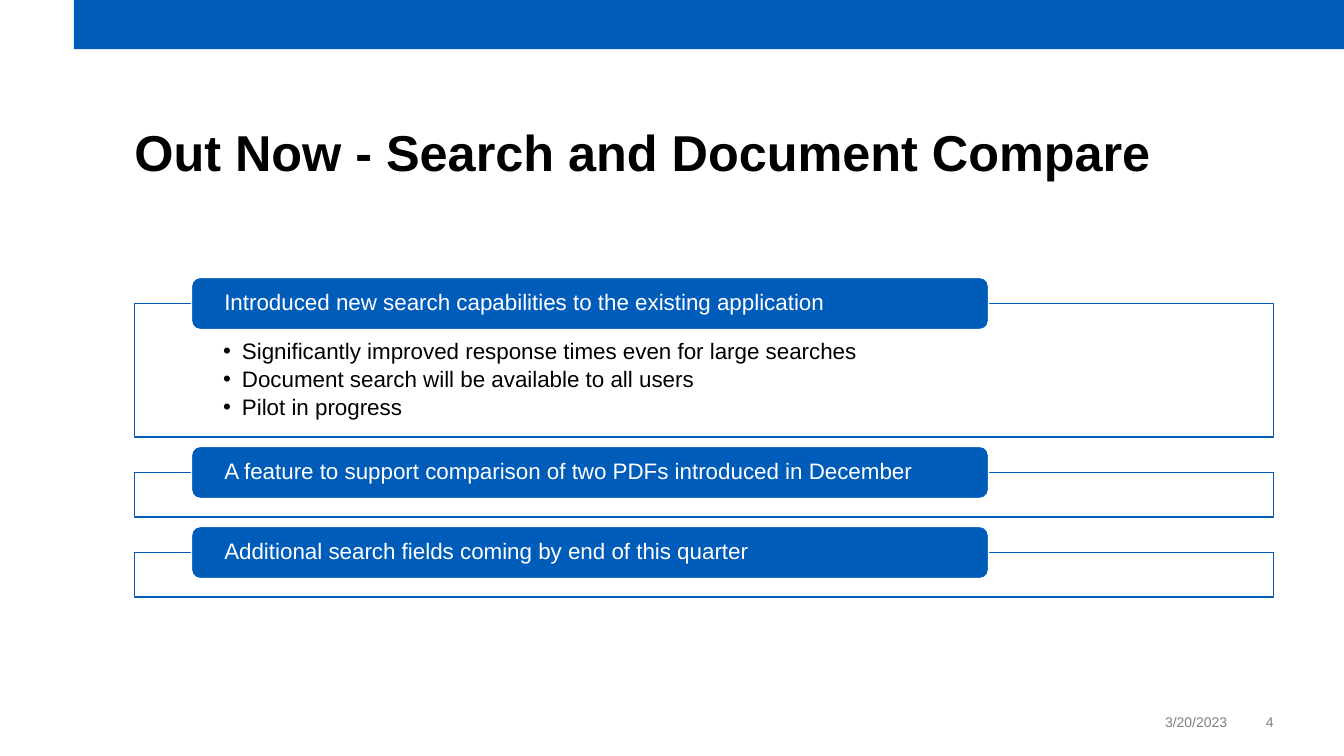
from lxml import etree
from pptx import Presentation
from pptx.dml.color import RGBColor
from pptx.enum.shapes import MSO_SHAPE
from pptx.enum.text import MSO_ANCHOR, PP_ALIGN
from pptx.oxml.ns import qn
from pptx.util import Inches, Pt

BLUE = RGBColor(0x00, 0x5C, 0xB9)
WHITE = RGBColor(0xFF, 0xFF, 0xFF)
BLACK = RGBColor(0x00, 0x00, 0x00)
GRAY = RGBColor(0x80, 0x80, 0x80)
RECT, ROUNDED = MSO_SHAPE.RECTANGLE, MSO_SHAPE.ROUNDED_RECTANGLE
TOP, MIDDLE, BOTTOM = MSO_ANCHOR.TOP, MSO_ANCHOR.MIDDLE, MSO_ANCHOR.BOTTOM
LEFT, RIGHT = PP_ALIGN.LEFT, PP_ALIGN.RIGHT
TITLE_ONLY = 5

# Grid of 100 columns by 100 rows
MARGIN, CONTENT_W = 10, 84.75
LABEL_X, LABEL_W, LABEL_H = 14.25, 59.3, 6.9
PANEL_TOP, PANEL_GAP, PANEL_H, BULLETS_H = 40.15, 4.7, 5.9, 11.75

SECTIONS = [
    ("Introduced new search capabilities to the existing application",
     ["Significantly improved response times even for large searches",
      "Document search will be available to all users",
      "Pilot in progress"]),
    ("A feature to support comparison of two PDFs introduced in December", []),
    ("Additional search fields coming by end of this quarter", []),
]


class Deck:
    font = "Arial"

    def __init__(self):
        self.prs = Presentation()
        self.prs.slide_width = Inches(13.33)
        self.prs.slide_height = Inches(7.5)
        self.s = self.prs.slides.add_slide(self.prs.slide_layouts[TITLE_ONLY])

    def col(self, n):
        return round(self.prs.slide_width * n / 100)

    def row(self, n):
        return round(self.prs.slide_height * n / 100)

    def box(self, x, y, w, h):
        return self.col(x), self.row(y), self.col(w), self.row(h)

    def set_text(self, sp, lines, size, color, anchor=TOP, align=LEFT,
                 bold=False, spacing=0.9, after=0, inset=(0, 0), bullets=False):
        tf = sp.text_frame
        tf.word_wrap = True
        tf.vertical_anchor = anchor
        tf.margin_left = tf.margin_right = self.col(inset[0])
        tf.margin_top, tf.margin_bottom = self.row(inset[1]), 0
        tf.text = "\n".join(lines)
        for p in tf.paragraphs:
            p.alignment = align
            p.line_spacing = spacing
            p.space_before, p.space_after = Pt(0), Pt(after)
            if bullets:
                self.bullet(p)
            for r in p.runs:
                r.font.name, r.font.size = self.font, Pt(size)
                r.font.bold, r.font.color.rgb = bold, color

    def bullet(self, p):
        pPr = p._p.get_or_add_pPr()
        indent = self.col(1.4)
        pPr.set("marL", str(indent))
        pPr.set("indent", str(-indent))
        etree.SubElement(pPr, qn("a:buFont")).set("typeface", self.font)
        etree.SubElement(pPr, qn("a:buChar")).set("char", "•")

    def title(self, text, x, y, w, h):
        sp = self.s.shapes.title
        sp.left, sp.top, sp.width, sp.height = self.box(x, y, w, h)
        self.set_text(sp, [text], 36, BLACK, anchor=BOTTOM, bold=True)

    def shape(self, kind, x, y, w, h, fill, line=None):
        sp = self.s.shapes.add_shape(kind, *self.box(x, y, w, h))
        sp.shadow.inherit = False
        sp.fill.solid()
        sp.fill.fore_color.rgb = fill
        if line is None:
            sp.line.fill.background()
        else:
            sp.line.color.rgb, sp.line.width = line, Pt(1)
        return sp

    def panel(self, y, h, bullets):
        sp = self.shape(RECT, MARGIN, y, CONTENT_W, h, WHITE, BLUE)
        color = sp._element.spPr.find(qn("a:solidFill"))[0]
        etree.SubElement(color, qn("a:alpha")).set("val", "90000")
        if bullets:
            self.set_text(sp, bullets, 16, BLACK, after=3,
                          inset=(6.6, 4.8), bullets=True)

    def label(self, text, middle):
        sp = self.shape(ROUNDED, LABEL_X, middle - LABEL_H / 2,
                        LABEL_W, LABEL_H, BLUE, WHITE)
        self.set_text(sp, [text], 16, WHITE, anchor=MIDDLE, inset=(2.25, 0))

    def footer(self, text, x, w):
        sp = self.s.shapes.add_textbox(*self.box(x, 93.85, w, 2.7))
        self.set_text(sp, [text], 10, GRAY, anchor=BOTTOM, align=RIGHT, spacing=1)


def main():
    deck = Deck()

    # Top band and title
    deck.shape(RECT, 5.5, 0, 94.5, 6.5, BLUE)
    deck.title("Out Now - Search and Document Compare",
               MARGIN, 16.25, CONTENT_W, 7.85)

    # Stacked sections, each label centred on the top edge of its panel
    top = PANEL_TOP
    for heading, bullets in SECTIONS:
        height = PANEL_H + (BULLETS_H if bullets else 0)
        deck.panel(top, height, bullets)
        deck.label(heading, top)
        top += height + PANEL_GAP

    # Date and slide number
    deck.footer("3/20/2023", 86, 5.3)
    deck.footer("4", 92, 2.75)

    deck.prs.save("out.pptx")


if __name__ == "__main__":
    main()
